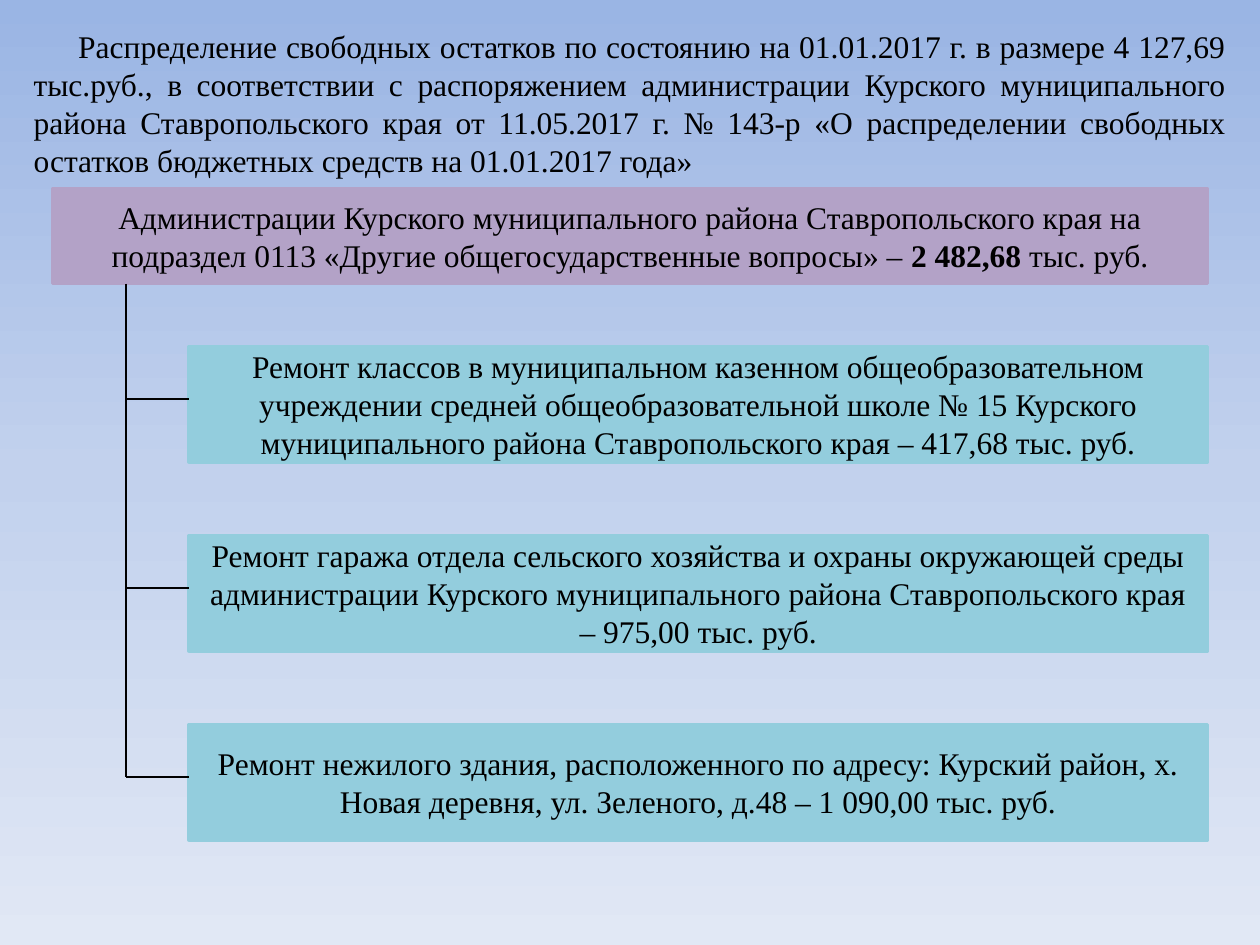
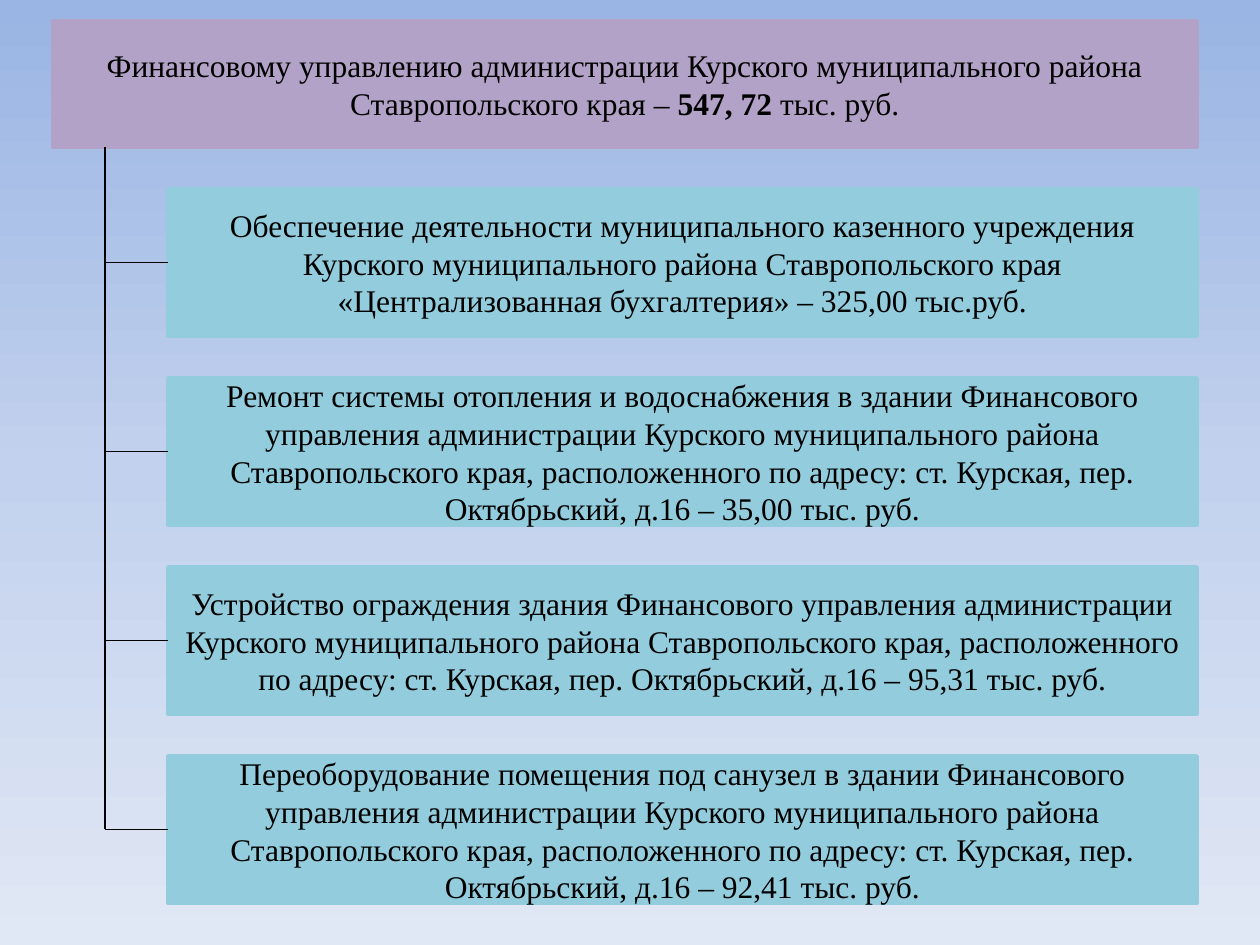
from copy import deepcopy

from pptx import Presentation
from pptx.dml.color import RGBColor
from pptx.enum.shapes import MSO_CONNECTOR, MSO_SHAPE
from pptx.enum.text import MSO_ANCHOR, MSO_AUTO_SIZE, PP_ALIGN
from pptx.oxml.ns import qn
from pptx.util import Pt

RECT, LINE = MSO_SHAPE.RECTANGLE, MSO_CONNECTOR.STRAIGHT
TOP, MIDDLE = MSO_ANCHOR.TOP, MSO_ANCHOR.MIDDLE
CENTER, JUSTIFY = PP_ALIGN.CENTER, PP_ALIGN.JUSTIFY
FIXED = MSO_AUTO_SIZE.NONE

MAUVE, TEAL, BLACK = "B3A2C7", "93CDDD", "000000"
SKY = ["9AB5E4", "C2D1ED", "E1E8F5"]
STEP = 108   # from one item's top to the next
ARM = 36     # length of a branch

color = RGBColor.from_string


def write(shape, area, parts, fill=None, align=CENTER, anchor=MIDDLE):
    """Place the shape and set its paint and text; every second part is bold."""
    shape.left, shape.top, shape.width, shape.height = map(Pt, area)
    if fill:
        shape.fill.solid()
        shape.fill.fore_color.rgb = color(fill)
        shape.line.color.rgb = color(fill)
        shape.line.width = Pt(2)
    frame = shape.text_frame
    frame.word_wrap = True
    frame.auto_size = FIXED
    frame.vertical_anchor = anchor
    para = frame.paragraphs[0]
    para.alignment = align
    para.font.name = "Times New Roman"
    para.font.size = Pt(18)
    para.font.color.rgb = color(BLACK)
    for i, part in enumerate(parts):
        run = para.add_run()
        run.text = part
        if i % 2:
            run.font.bold = True
    return para


def link(slide, x1, y1, x2, y2):
    line = slide.shapes.add_connector(LINE, Pt(x1), Pt(y1), Pt(x2), Pt(y2))
    line.line.color.rgb = color(BLACK)
    line.line.width = Pt(0.75)
    props = line._element.spPr
    props.append(props.makeelement(qn("a:effectLst"), {}))


prs = Presentation()
prs.slide_width, prs.slide_height = Pt(720), Pt(540)

# Shared background: three-stop vertical gradient on the master
master = prs.slide_master
fill = master.background.fill
fill.gradient()
fill.gradient_angle = 270
stops = master.element.find(".//" + qn("a:gsLst"))
stops.insert(1, deepcopy(stops[0]))
for i, (stop, tone) in enumerate(zip(fill.gradient_stops, SKY)):
    stop.position = i / 2
    stop.color.rgb = color(tone)

intro = (
    "Распределение свободных остатков по состоянию на 01.01.2017 г. в размере "
    "4 127,69 тыс.руб., в соответствии с распоряжением администрации Курского "
    "муниципального района Ставропольского края от 11.05.2017 г. № 143-р "
    "«О распределении свободных остатков бюджетных средств на 01.01.2017 года»"
)

# head and first are (left, top, width, height); drop is from item top to branch
trees = [
    dict(
        intro=intro,
        head=(30, 108, 660, 54),
        title=("Администрации Курского муниципального района Ставропольского "
               "края на подраздел 0113 «Другие общегосударственные вопросы» – ",
               "2 482,68 ", "тыс. руб."),
        first=(108, 198, 582, 66),
        drop=30,
        items=[
            "Ремонт классов в муниципальном казенном общеобразовательном "
            "учреждении средней общеобразовательной школе № 15 Курского "
            "муниципального района Ставропольского края – 417,68 тыс. руб.",
            "Ремонт гаража отдела сельского хозяйства и охраны окружающей среды "
            "администрации Курского муниципального района Ставропольского края "
            "– 975,00 тыс. руб.",
            "Ремонт нежилого здания, расположенного по адресу: Курский район, "
            "х. Новая деревня, ул. Зеленого, д.48 – 1 090,00 тыс. руб.",
        ],
    ),
    dict(
        intro=None,
        head=(30, 12, 654, 72),
        title=("Финансовому управлению администрации Курского муниципального "
               "района Ставропольского края – ", "547, 72 ", "тыс. руб."),
        first=(96, 108, 588, 84),
        drop=42,
        items=[
            "Обеспечение деятельности муниципального казенного учреждения "
            "Курского муниципального района Ставропольского края "
            "«Централизованная бухгалтерия» – 325,00 тыс.руб.",
            "Ремонт системы отопления и водоснабжения в здании Финансового "
            "управления администрации Курского муниципального района "
            "Ставропольского края, расположенного по адресу: ст. Курская, пер. "
            "Октябрьский, д.16 – 35,00 тыс. руб.",
            "Устройство ограждения здания Финансового управления администрации "
            "Курского муниципального района Ставропольского края, расположенного "
            "по адресу: ст. Курская, пер. Октябрьский, д.16 – 95,31 тыс. руб.",
            "Переоборудование помещения под санузел в здании Финансового "
            "управления администрации Курского муниципального района "
            "Ставропольского края, расположенного по адресу: ст. Курская, пер. "
            "Октябрьский, д.16 – 92,41 тыс. руб.",
        ],
    ),
]

for tree in trees:
    slide = prs.slides.add_slide(prs.slide_layouts[5])
    shapes = slide.shapes
    head = shapes.title
    if tree["intro"]:
        para = write(shapes.title, (12, 12, 696, 94), [tree["intro"]],
                     align=JUSTIFY, anchor=TOP)
        para._p.get_or_add_pPr().set("indent", str(Pt(25.5)))
        head = shapes.add_shape(RECT, 0, 0, 0, 0)
        head.shadow.inherit = False
    write(head, tree["head"], tree["title"], MAUVE)

    left, top, width, height = tree["first"]
    spine = left - ARM
    for i, item in enumerate(tree["items"]):
        y = top + i * STEP
        box = shapes.add_shape(RECT, 0, 0, 0, 0)
        box.shadow.inherit = False
        write(box, (left, y, width, height), [item], TEAL)
        branch = y + tree["drop"]
        link(slide, spine, branch, left, branch)
    link(slide, spine, tree["head"][1] + tree["head"][3], spine, branch)

prs.save("out.pptx")
